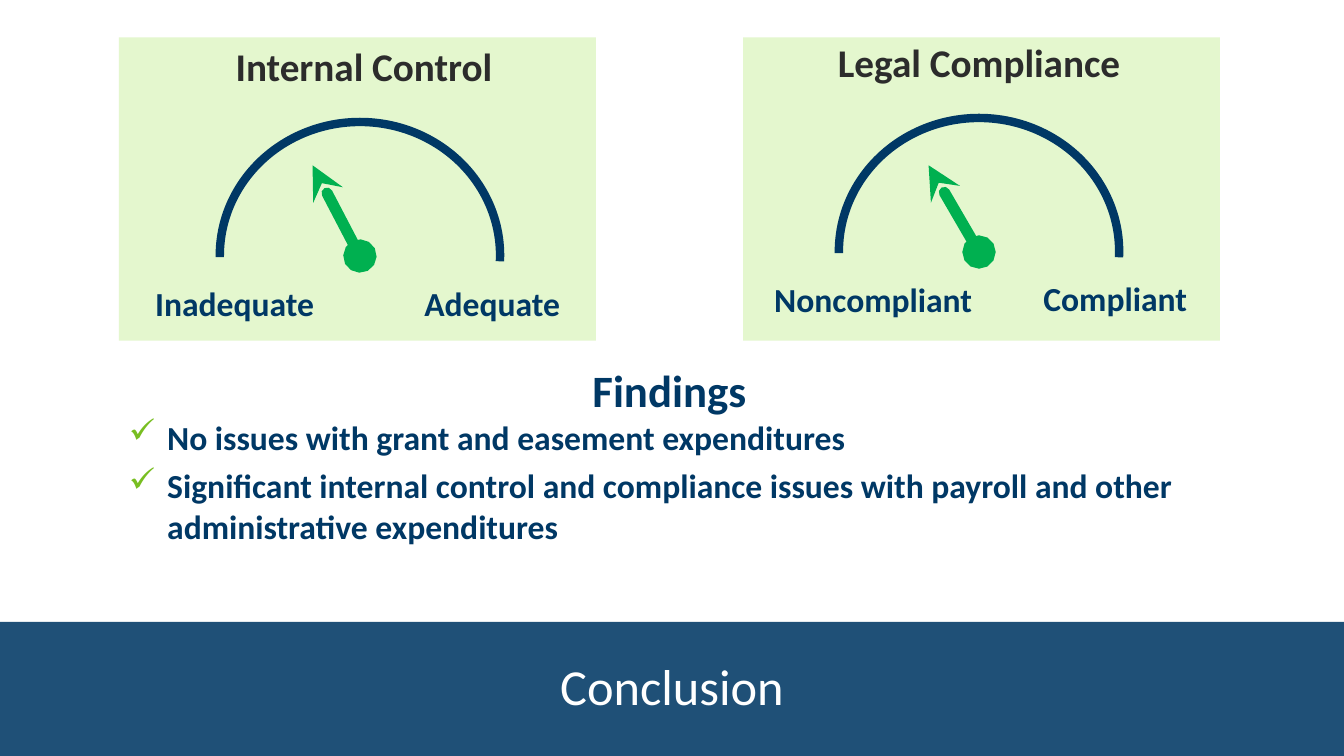
from dataclasses import dataclass

from lxml import etree
from pptx import Presentation
from pptx import util as u
from pptx.dml.color import RGBColor
from pptx.enum import shapes, text
from pptx.oxml import ns


@dataclass(frozen=True)
class Theme:
    font: str = "Calibri"
    navy: str = "003865"
    panel: str = "E4F7CE"
    needle: str = "00B050"
    check: str = "78BE21"
    heading: str = "2C2C2C"
    white: str = "FFFFFF"
    title_size: int = 36
    findings_size: int = 32
    heading_size: int = 28
    body_size: int = 24


theme = Theme()


def add_xml(parent, tag, **attributes):
    return etree.SubElement(parent, ns.qn(tag), attributes)


def write(paragraph, words, size, color, bold=True):
    paragraph.text = words
    font = paragraph.runs[0].font
    font.name, font.size, font.bold = theme.font, u.Pt(size), bold
    font.color.rgb = RGBColor.from_string(color)


deck = Presentation()
deck.slide_width, deck.slide_height = u.Inches(13.33), u.Inches(7.5)
slide = deck.slides.add_slide(deck.slide_layouts[6])

# Gauges: panel left, arc left and top, needle tip offset from hub, labels (text, left, top, width)
gauges = [
    (7.37, 8.32, 1.17, (-0.5, -0.86), [
        ("Legal Compliance", 8.19, 0.33, 3.04),
        ("Noncompliant", 7.58, 2.72, 2.18),
        ("Compliant", 10.25, 2.71, 1.64)]),
    (1.18, 2.18, 1.21, (-0.47, -0.9), [
        ("Internal Control", 2.22, 0.37, 2.78),
        ("Inadequate", 1.44, 2.76, 1.8),
        ("Adequate", 4.11, 2.76, 1.56)]),
]
for panel_left, dial_left, dial_top, (tip_x, tip_y), labels in gauges:
    panel = slide.shapes.add_shape(
        shapes.MSO_SHAPE.RECTANGLE, u.Inches(panel_left), u.Inches(0.37), u.Inches(4.73), u.Inches(3.01))
    panel.shadow.inherit = False
    panel.fill.solid()
    panel.fill.fore_color.rgb = RGBColor.from_string(theme.panel)
    panel.line.fill.background()

    dial = slide.shapes.add_shape(
        shapes.MSO_SHAPE.ARC, u.Inches(dial_left), u.Inches(dial_top), u.Inches(2.78), u.Inches(2.65))
    dial.shadow.inherit = False
    dial.adjustments[0], dial.adjustments[1] = 107.574, 1.417
    dial.fill.background()
    dial.line.color.rgb = RGBColor.from_string(theme.navy)
    dial.line.width = u.Pt(6)

    hub_x, hub_y = dial_left + 1.39, dial_top + 1.33
    needle = slide.shapes.add_connector(
        shapes.MSO_CONNECTOR.STRAIGHT, u.Inches(hub_x), u.Inches(hub_y),
        u.Inches(hub_x + tip_x), u.Inches(hub_y + tip_y))
    needle.line.color.rgb = RGBColor.from_string(theme.needle)
    needle.line.width = u.Pt(8)
    stroke = needle.line._get_or_add_ln()
    stroke.set("cap", "rnd")
    add_xml(stroke, "a:round")
    add_xml(stroke, "a:headEnd", type="oval")
    add_xml(stroke, "a:tailEnd", type="stealth")
    add_xml(needle._element.spPr, "a:effectLst")

    for index, (words, left, top, width) in enumerate(labels):
        is_heading = index == 0
        label = slide.shapes.add_textbox(
            u.Inches(left), u.Inches(top), u.Inches(width), u.Inches(0.57 if is_heading else 0.5))
        label.text_frame.word_wrap = False
        label.text_frame.auto_size = text.MSO_AUTO_SIZE.SHAPE_TO_FIT_TEXT
        line = label.text_frame.paragraphs[0]
        if is_heading:
            line.alignment = text.PP_ALIGN.CENTER
            write(line, words, theme.heading_size, theme.heading)
        else:
            write(line, words, theme.body_size, theme.navy)

# Findings
findings = slide.shapes.add_textbox(u.Inches(1.18), u.Inches(3.55), u.Inches(10.92), u.Inches(2.41))
findings.text_frame.word_wrap = True
findings_heading = findings.text_frame.paragraphs[0]
findings_heading.alignment = text.PP_ALIGN.CENTER
write(findings_heading, "Findings", theme.findings_size, theme.navy)
for finding in [
    "No issues with grant and easement expenditures",
    "Significant internal control and compliance issues with payroll and other administrative expenditures",
]:
    item = findings.text_frame.add_paragraph()
    item.space_after = u.Pt(6)
    properties = item._p.get_or_add_pPr()
    properties.set("marL", str(u.Inches(0.38)))
    properties.set("indent", str(-u.Inches(0.38)))
    add_xml(add_xml(properties, "a:buClr"), "a:srgbClr", val=theme.check)
    add_xml(properties, "a:buChar", char="✓")
    write(item, finding, theme.body_size, theme.navy)

# Title band
band = slide.shapes.add_shape(
    shapes.MSO_SHAPE.RECTANGLE, 0, u.Inches(6.17), deck.slide_width, u.Inches(1.33))
band.shadow.inherit = False
band.fill.solid()
band.fill.fore_color.rgb = RGBColor.from_string(theme.navy)
band_color = band._element.spPr.find(ns.qn("a:solidFill")).find(ns.qn("a:srgbClr"))
add_xml(band_color, "a:alpha", val="88000")
band.line.fill.background()
band.text_frame.vertical_anchor = text.MSO_ANCHOR.MIDDLE
title = band.text_frame.paragraphs[0]
title.alignment = text.PP_ALIGN.CENTER
title.line_spacing = 0.9
write(title, "Conclusion", theme.title_size, theme.white, bold=False)

deck.save("out.pptx")
